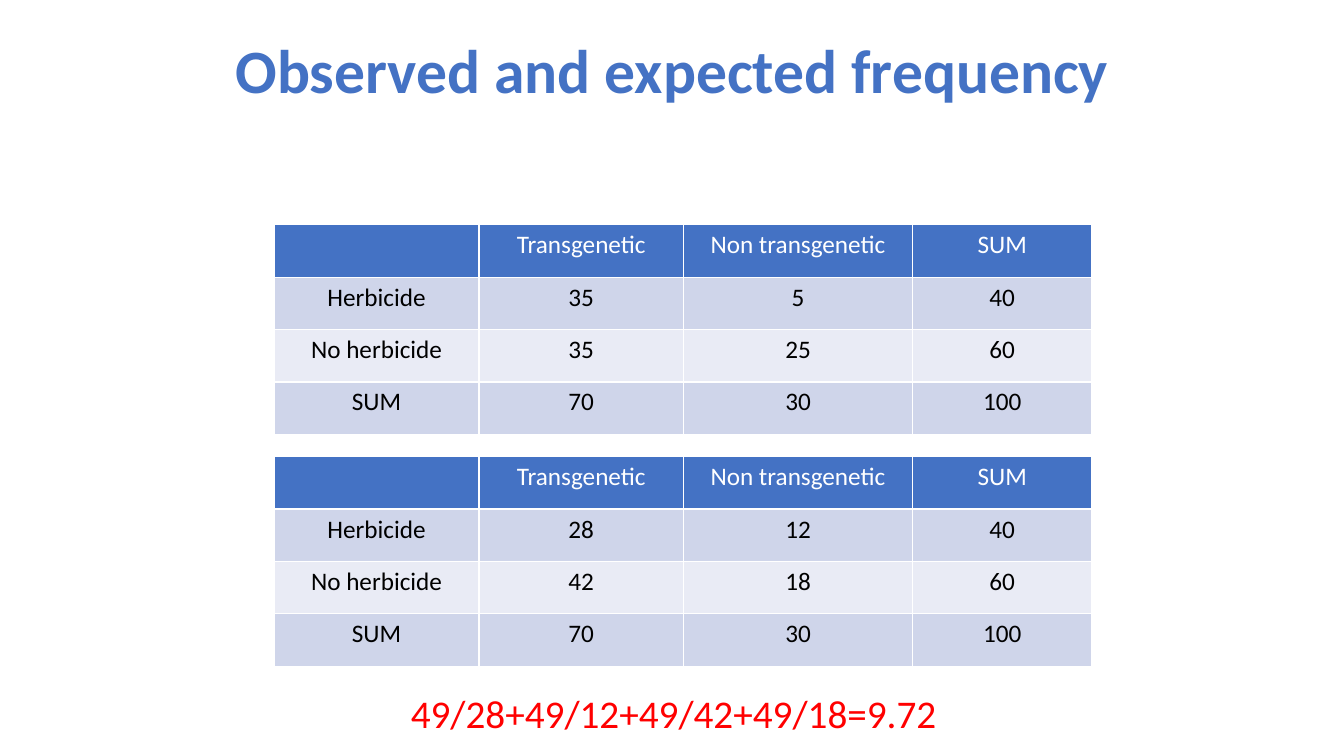
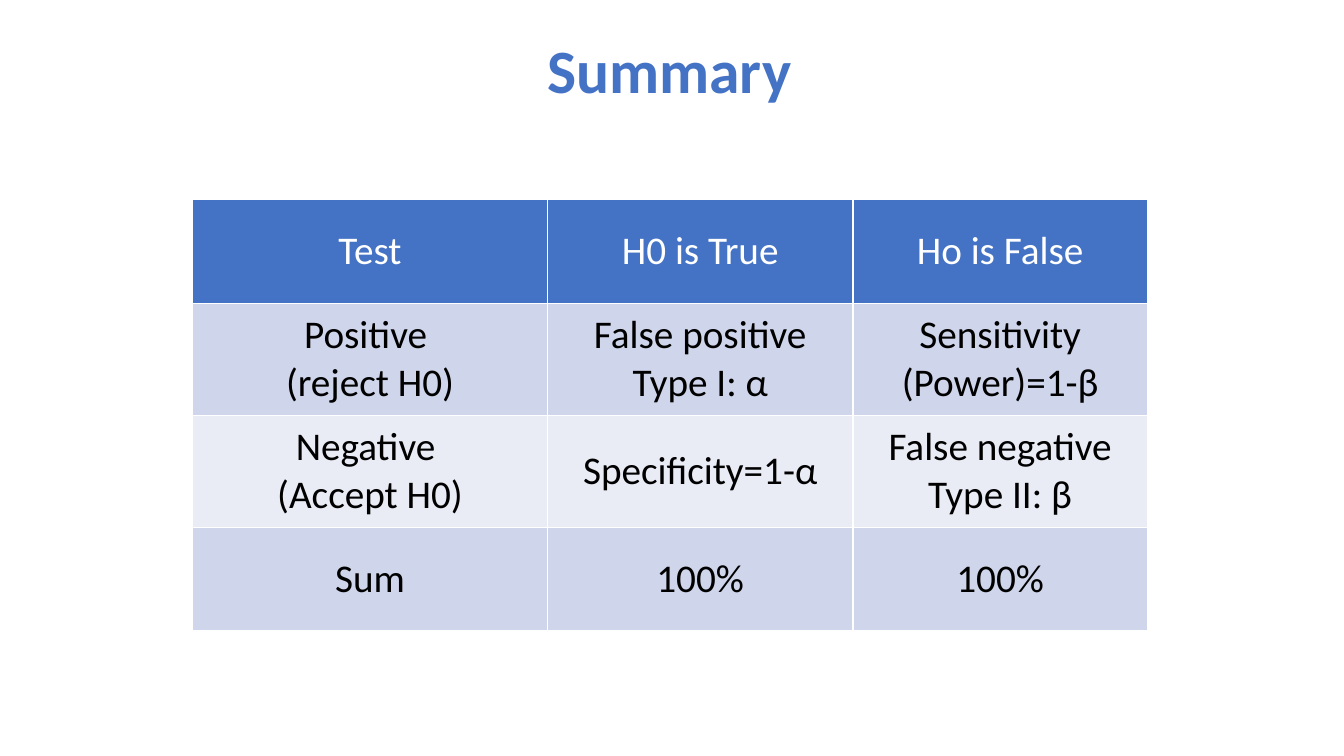
from pptx import Presentation
from pptx.dml.color import RGBColor
from pptx.enum.text import MSO_ANCHOR, MSO_AUTO_SIZE, PP_ALIGN
from pptx.util import Inches, Pt

FONT = "Calibri"
BLUE = RGBColor(0x44, 0x72, 0xC4)
BAND_DARK = RGBColor(0xCF, 0xD5, 0xEA)
BAND_LIGHT = RGBColor(0xE9, 0xEB, 0xF5)
WHITE = RGBColor(0xFF, 0xFF, 0xFF)
BLACK = RGBColor(0x00, 0x00, 0x00)
RED = RGBColor(0xFF, 0x00, 0x00)

FREQUENCY_COLUMNS = [2.03, 2.03, 2.27, 1.78]
FREQUENCY_ROWS = [0.52] * 4
OBSERVED = [[35, 5], [35, 25]]
EXPECTED = [[28, 12], [42, 18]]

SUMMARY_COLUMNS = [3.52, 3.03, 2.92]
SUMMARY_ROWS = [1.03, 1.11, 1.11, 1.03]
SUMMARY = [
    ["Test", "H0 is True", "Ho is False"],
    ["Positive \n(reject H0)", "False positive\nType I: α", "Sensitivity (Power)=1-β"],
    ["Negative \n(Accept H0)", "Specificity=1-α", "False negative\nType II: β"],
    ["Sum", "100%", "100%"],
]


def format_text(frame, size, color, bold=False):
    """Centre every paragraph of a text frame and set its font."""
    for para in frame.paragraphs:
        para.alignment = PP_ALIGN.CENTER
        para.font.name = FONT
        para.font.size = Pt(size)
        para.font.bold = bold
        para.font.color.rgb = color


def add_page(deck, title, left):
    """Add a title-only slide with the shared title style."""
    page = deck.slides.add_slide(deck.slide_layouts[5])
    box = page.shapes.title
    box.left, box.top = Inches(left), Inches(0)
    box.width, box.height = Inches(11.5), Inches(1.45)
    frame = box.text_frame
    frame.text = title
    frame.vertical_anchor = MSO_ANCHOR.MIDDLE
    frame.auto_size = MSO_AUTO_SIZE.NONE
    frame.paragraphs[0].line_spacing = 0.9
    format_text(frame, 44, BLUE, bold=True)
    return page


def add_banded_table(page, left, top, widths, heights, rows, size, anchor):
    """Add a table with a blue header and alternating row bands."""
    table = page.shapes.add_table(
        len(rows), len(widths), Inches(left), Inches(top),
        Inches(sum(widths)), Inches(sum(heights))).table
    for column, width in zip(table.columns, widths):
        column.width = Inches(width)
    for index, (row, height) in enumerate(zip(rows, heights)):
        table.rows[index].height = Inches(height)
        band = BAND_DARK if index % 2 else BAND_LIGHT
        for cell, value in zip(table.rows[index].cells, row):
            cell.text = str(value)
            cell.vertical_anchor = anchor
            cell.fill.solid()
            cell.fill.fore_color.rgb = band if index else BLUE
            format_text(cell.text_frame, size, BLACK if index else WHITE)


def frequency_rows(counts):
    """Frame a two-by-two count table with labels and sums."""
    full = [row + [sum(row)] for row in counts]
    full.append([sum(column) for column in zip(*full)])
    labels = ["Herbicide", "No herbicide", "SUM"]
    header = ["", "Transgenetic", "Non transgenetic", "SUM"]
    return [header] + [[label] + row for label, row in zip(labels, full)]


def add_formula(page, left, top, width, height, text):
    """Add the red result line."""
    box = page.shapes.add_textbox(
        Inches(left), Inches(top), Inches(width), Inches(height))
    frame = box.text_frame
    frame.word_wrap = True
    frame.auto_size = MSO_AUTO_SIZE.SHAPE_TO_FIT_TEXT
    frame.text = text
    format_text(frame, 28, RED)


def build_frequency_page(deck):
    """Build the slide with observed and expected counts."""
    page = add_page(deck, "Observed and expected frequency", 0.92)
    for top, counts in ((2.23, OBSERVED), (4.53, EXPECTED)):
        add_banded_table(page, 2.72, top, FREQUENCY_COLUMNS, FREQUENCY_ROWS,
                         frequency_rows(counts), 18, MSO_ANCHOR.TOP)
    add_formula(page, 3.24, 6.79, 6.88, 0.57, "49/28+49/12+49/42+49/18=9.72")


def build_summary_page(deck):
    """Build the slide that sums up the test outcomes."""
    page = add_page(deck, "Summary", 0.89)
    add_banded_table(page, 1.91, 1.98, SUMMARY_COLUMNS, SUMMARY_ROWS,
                     SUMMARY, 28, MSO_ANCHOR.MIDDLE)


def main():
    """Build and save the deck."""
    deck = Presentation()
    deck.slide_width, deck.slide_height = Inches(13.33), Inches(7.5)
    build_frequency_page(deck)
    build_summary_page(deck)
    deck.save("out.pptx")


if __name__ == "__main__":
    main()
